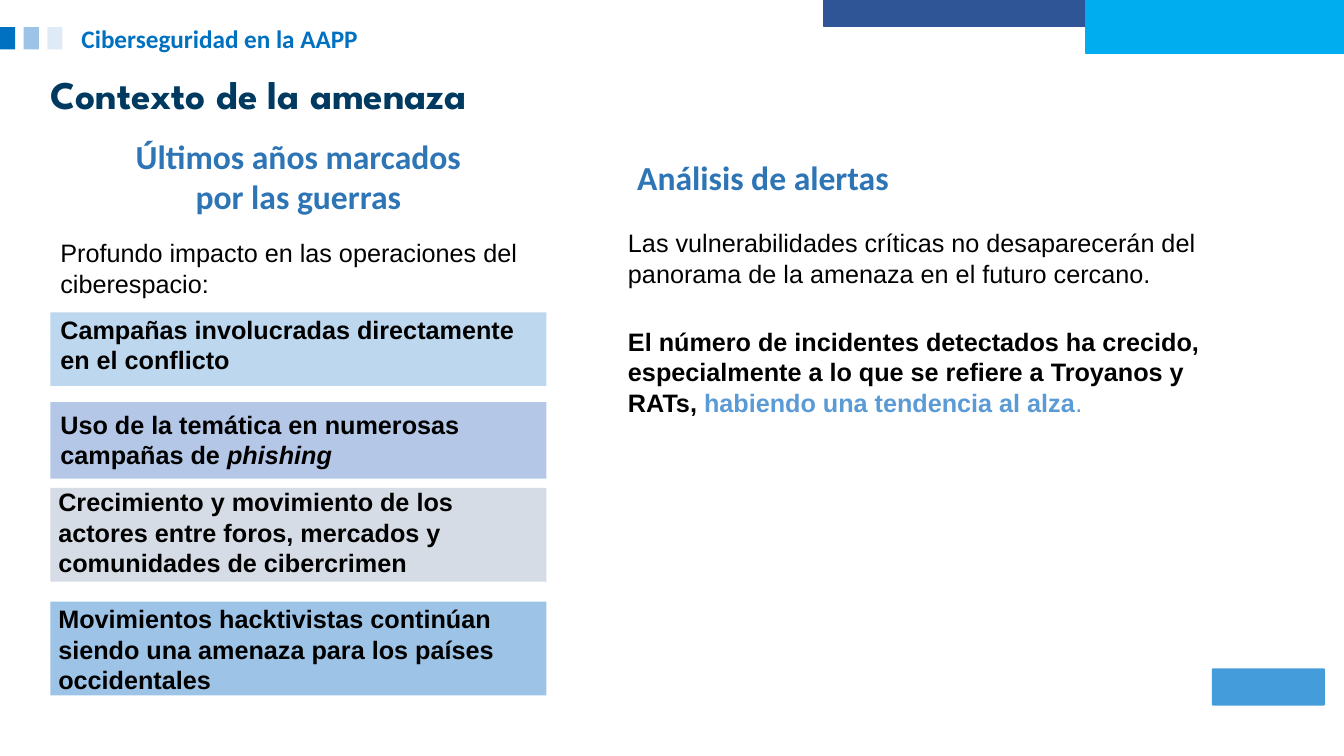
from pptx import Presentation
from pptx.dml.color import RGBColor
from pptx.enum.shapes import MSO_SHAPE
from pptx.enum.text import MSO_ANCHOR, PP_ALIGN
from pptx.util import Inches, Pt

RECTANGLE = MSO_SHAPE.RECTANGLE
ROUNDED = MSO_SHAPE.ROUNDED_RECTANGLE
LEFT, CENTER = PP_ALIGN.LEFT, PP_ALIGN.CENTER
TOP = MSO_ANCHOR.TOP

BLACK = RGBColor(0x00, 0x00, 0x00)
NAVY = RGBColor(0x01, 0x3A, 0x60)
INDIGO = RGBColor(0x2F, 0x55, 0x97)
CYAN = RGBColor(0x00, 0xAD, 0xEE)
FOOTER_BLUE = RGBColor(0x44, 0x9C, 0xDA)
HEADING_BLUE = RGBColor(0x2E, 0x75, 0xB6)
ACCENT_BLUE = RGBColor(0x5B, 0x9B, 0xD5)
STRONG_BLUE = RGBColor(0x00, 0x70, 0xC0)
SKY = RGBColor(0x9D, 0xC3, 0xE6)
PALE_SKY = RGBColor(0xDE, 0xEB, 0xF7)
LIGHT_BLUE = RGBColor(0xBD, 0xD7, 0xEE)
LAVENDER = RGBColor(0xB4, 0xC7, 0xE7)
GREY = RGBColor(0xD6, 0xDC, 0xE5)

CARD_LEFT, CARD_WIDTH = 0.5, 4.92


def add_run(paragraph, text, *, size=18, font="Arial", color=BLACK, bold=False, italic=False):
    """Append text to a paragraph with the given format."""
    run = paragraph.add_run()
    run.text = text
    run.font.size = Pt(size)
    run.font.name = font
    run.font.color.rgb = color
    run.font.bold = bold
    run.font.italic = italic


class SlideBuilder:
    """Holds the style and the current slide, and adds its elements."""

    heading = {"size": 24, "font": "Calibri", "color": HEADING_BLUE, "bold": True}
    section = {"size": 18, "font": "Calibri", "color": STRONG_BLUE, "bold": True}
    title_style = {"size": 28, "font": "League Spartan", "color": NAVY, "bold": True}
    strong = {"bold": True}

    def __init__(self, presentation):
        """Add a slide with a title placeholder."""
        self.slide = presentation.slides.add_slide(presentation.slide_layouts[5])

    def block(self, left, top, width, height, fill, kind=RECTANGLE, outlined=False):
        """Add a plain coloured shape."""
        shape = self.slide.shapes.add_shape(
            kind, Inches(left), Inches(top), Inches(width), Inches(height))
        shape.shadow.inherit = False
        shape.fill.solid()
        shape.fill.fore_color.rgb = fill
        if outlined:
            shape.line.color.rgb = fill
            shape.line.width = Pt(1)
        else:
            shape.line.fill.background()
        return shape

    def fill_frame(self, frame, runs, align=LEFT, inset=True):
        """Write formatted runs in the first paragraph of a text frame."""
        frame.word_wrap = True
        frame.vertical_anchor = TOP
        if not inset:
            frame.margin_left = frame.margin_right = Inches(0)
            frame.margin_top = frame.margin_bottom = Inches(0)
        paragraph = frame.paragraphs[0]
        paragraph.alignment = align
        for text, style in runs:
            add_run(paragraph, text, **style)
        return paragraph

    def text(self, left, top, width, height, *runs, align=LEFT, inset=True):
        """Add a wrapping text box."""
        box = self.slide.shapes.add_textbox(
            Inches(left), Inches(top), Inches(width), Inches(height))
        self.fill_frame(box.text_frame, runs, align, inset)

    def title(self, text):
        """Place and format the title placeholder."""
        title = self.slide.shapes.title
        title.left, title.top = Inches(0.5), Inches(0.75)
        title.width, title.height = Inches(8.67), Inches(0.42)
        paragraph = self.fill_frame(title.text_frame, [(text, self.title_style)], inset=False)
        paragraph.line_spacing = 0.9


def main():
    """Build and save the slide."""
    presentation = Presentation()
    presentation.slide_width, presentation.slide_height = Inches(13.33), Inches(7.5)
    builder = SlideBuilder(presentation)
    strong, heading = builder.strong, builder.heading

    page_tab = builder.block(12.02, 6.63, 1.12, 0.37, FOOTER_BLUE, kind=ROUNDED)
    page_tab.adjustments[0] = 0.03
    builder.block(8.17, 0, 2.59, 0.26, INDIGO, outlined=True)
    builder.block(10.77, 0, 2.57, 0.53, CYAN, outlined=True)

    for index, color in enumerate((STRONG_BLUE, SKY, PALE_SKY)):
        builder.block(index * 0.235, 0.27, 0.15, 0.22, color)
    builder.text(0.71, 0.18, 5.18, 0.4, ("Ciberseguridad en la AAPP", builder.section))
    builder.title("Contexto de la amenaza")

    builder.text(1.01, 1.3, 3.9, 0.91,
                 ("Últimos años marcados por las guerras", heading), align=CENTER)
    builder.text(0.5, 2.31, 5.62, 0.71,
                 ("Profundo impacto en las operaciones del ciberespacio:", {}))

    cards = (
        (3.1, 0.73, LIGHT_BLUE, 0.5, 3.07,
         [("Campañas involucradas directamente en el conflicto", strong)]),
        (3.99, 0.76, LAVENDER, 0.5, 4.01,
         [("Uso de la temática en numerosas campañas de ", strong),
          ("phishing", {"bold": True, "italic": True})]),
        (4.84, 0.93, GREY, 0.48, 4.78,
         [("Crecimiento y movimiento de los actores entre foros, mercados y "
           "comunidades de cibercrimen", strong)]),
        (5.97, 0.93, SKY, 0.48, 5.94,
         [("Movimientos hacktivistas continúan siendo una amenaza para los países "
           "occidentales", strong)]),
    )
    for top, height, color, text_left, text_top, runs in cards:
        builder.block(CARD_LEFT, top, CARD_WIDTH, height, color)
        builder.text(text_left, text_top, 4.95, height, *runs)

    builder.text(6.32, 1.56, 5.15, 0.4, ("Análisis de alertas", heading), inset=False)
    builder.text(6.13, 2.21, 6.41, 0.71,
                 ("Las vulnerabilidades críticas no desaparecerán del panorama de la "
                  "amenaza en el futuro cercano.", {}))
    builder.text(6.13, 3.19, 6.41, 1.01,
                 ("El número de incidentes detectados ha crecido, especialmente a lo que "
                  "se refiere a Troyanos y RATs, ", strong),
                 ("habiendo una tendencia al alza", {"color": ACCENT_BLUE, "bold": True}),
                 (".", {"color": ACCENT_BLUE}))

    presentation.save("out.pptx")


if __name__ == "__main__":
    main()
